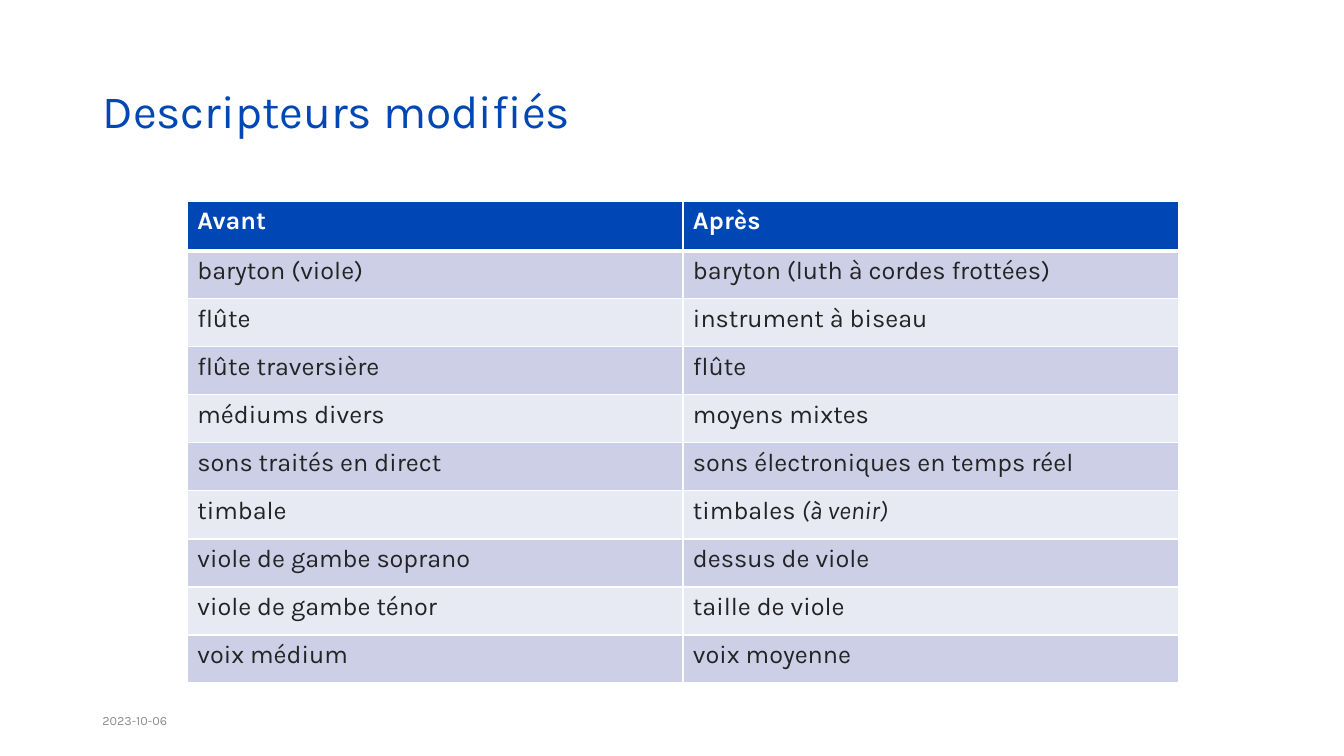
from dataclasses import dataclass

from lxml import etree
from pptx import Presentation
from pptx.dml.color import RGBColor
from pptx.enum.text import MSO_ANCHOR, PP_ALIGN
from pptx.oxml.ns import qn
from pptx.util import Cm, Pt

LEFT = PP_ALIGN.LEFT
MIDDLE = MSO_ANCHOR.MIDDLE
TITLE_ONLY = 5


@dataclass(frozen=True)
class Theme:
    font: str = "Karla"
    blue: str = "0047B6"
    ink: str = "232326"
    grey: str = "8D8D8E"
    white: str = "FFFFFF"
    bands: tuple = ("CCCFE5", "E7E9F3")
    title: int = 33
    body: int = 18
    small: int = 9
    thin: int = 1
    thick: int = 3


THEME = Theme()

HEAD = ("Avant", "Après")
TERMS = [
    ("baryton (viole)", "baryton (luth à cordes frottées)"),
    ("flûte", "instrument à biseau"),
    ("flûte traversière", "flûte"),
    ("médiums divers", "moyens mixtes"),
    ("sons traités en direct", "sons électroniques en temps réel"),
    ("timbale", ("timbales ", "(à venir)")),
    ("viole de gambe soprano", "dessus de viole"),
    ("viole de gambe ténor", "taille de viole"),
    ("voix médium", "voix moyenne"),
]


def add_run(para, text, size, color, bold=False, italic=False):
    run = para.add_run()
    run.text = text
    font = run.font
    font.name = THEME.font
    font.size = Pt(size)
    font.color.rgb = RGBColor.from_string(color)
    font.bold = bold
    font.italic = italic


def fill_text(shape, text, size, color):
    frame = shape.text_frame
    frame.word_wrap = True
    frame.vertical_anchor = MIDDLE
    para = frame.paragraphs[0]
    para.alignment = LEFT
    add_run(para, text, size, color)
    return para


def add_title(slide, text):
    title = slide.shapes.title
    title.left, title.top = Cm(2.33), Cm(1.02)
    title.width, title.height = Cm(29.21), Cm(3.68)
    para = fill_text(title, text, THEME.title, THEME.blue)
    para.line_spacing = 0.9


def add_date(slide, text):
    box = slide.shapes.add_textbox(Cm(2.33), Cm(17.65), Cm(7.62), Cm(1.02))
    fill_text(box, text, THEME.small, THEME.grey)


def set_edges(cell, top, bottom):
    """Draw white borders; the side ones are always thin."""
    props = cell._tc.get_or_add_tcPr()
    widths = {"lnL": THEME.thin, "lnR": THEME.thin, "lnT": top, "lnB": bottom}
    for tag, width in widths.items():
        line = etree.SubElement(props, qn(f"a:{tag}"), w=str(Pt(width)))
        fill = etree.SubElement(line, qn("a:solidFill"))
        etree.SubElement(fill, qn("a:srgbClr"), val=THEME.white)


def fill_cell(cell, text, row):
    """Style a cell; a pair of texts is a plain run, then an italic one."""
    head = row == 0
    set_edges(
        cell,
        top=THEME.thick if row == 1 else THEME.thin,
        bottom=THEME.thick if head else THEME.thin,
    )
    back = THEME.blue if head else THEME.bands[(row - 1) % 2]
    cell.fill.solid()
    cell.fill.fore_color.rgb = RGBColor.from_string(back)
    color = THEME.white if head else THEME.ink
    parts = (text,) if isinstance(text, str) else text
    para = cell.text_frame.paragraphs[0]
    for index, part in enumerate(parts):
        add_run(para, part, THEME.body, color, bold=head, italic=index > 0)


def add_terms(slide, rows):
    frame = slide.shapes.add_table(
        len(rows), len(HEAD), Cm(4.72), Cm(5.08), Cm(24.98), Cm(12.14)
    )
    table = frame.table
    for col in table.columns:
        col.width = Cm(12.49)
    for index, texts in enumerate(rows):
        table.rows[index].height = Cm(1.21 if index else 1.24)
        for col, text in enumerate(texts):
            fill_cell(table.cell(index, col), text, index)


def main():
    deck = Presentation()
    deck.slide_width, deck.slide_height = Cm(33.87), Cm(19.05)
    slide = deck.slides.add_slide(deck.slide_layouts[TITLE_ONLY])
    add_title(slide, "Descripteurs modifiés")
    add_date(slide, "2023-10-06")
    add_terms(slide, [HEAD, *TERMS])
    deck.save("out.pptx")


if __name__ == "__main__":
    main()
